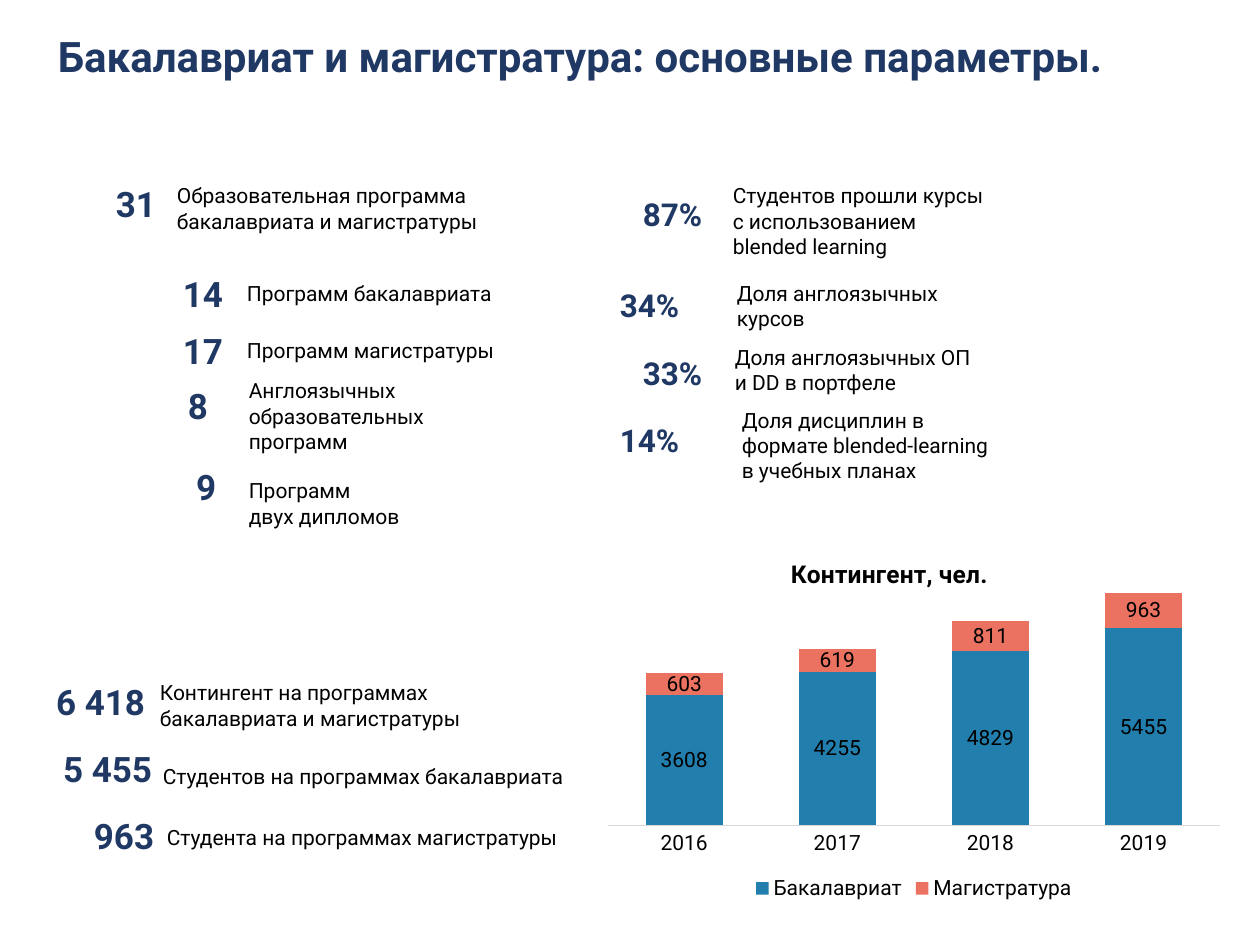
import pptx
import pptx.chart.data
import pptx.dml.color
import pptx.enum.chart
import pptx.enum.text
import pptx.oxml
import pptx.util

PX = 914400 // 126
FONT = "Roboto"
COLORS = {"navy": "203864", "black": "000000", "blue": "217EAD",
          "coral": "EB7260", "axis": "D9D9D9"}

# Content: text and box (left, top, width, height) in px
TITLE = ("Бакалавриат и магистратура: основные параметры.", (49, 25, 1100, 49))
COUNTS = [
    ("31", (74, 186, 91, 43)),
    ("14", (141, 276, 91, 43)),
    ("17", (141, 333, 91, 43)),
    ("9", (164, 469, 61, 43)),
    ("6 418", (-6, 684, 160, 43)),
    ("5 455", (-13, 751, 174, 43)),
    ("963", (33, 818, 130, 43)),
]
LEFT_COUNT = ("8", (179, 379, 43, 52))
RIGHT_SHARES = [("87%", (559, 190, 152, 48)), ("33%", (581, 349, 130, 48))]
LEFT_SHARES = [("34%", (611, 281, 149, 48)), ("14%", (611, 416, 141, 48))]
LABELS = [
    ("Образовательная программа бакалавриата и магистратуры", (168, 178, 325, 60)),
    ("Программ бакалавриата", (238, 275, 286, 35)),
    ("Программ магистратуры", (238, 332, 286, 35)),
    ("Англоязычных образовательных\nпрограмм", (240, 373, 237, 86)),
    ("Программ\nдвух дипломов", (240, 473, 286, 60)),
    ("Студентов прошли курсы\nс использованием blended learning", (724, 178, 271, 86)),
    ("Доля англоязычных курсов", (728, 275, 237, 60)),
    ("Доля англоязычных ОП\nи DD в портфеле", (726, 339, 271, 60)),
    ("Доля дисциплин в формате blended-learning в учебных планах",
     (733, 402, 271, 86)),
    ("Контингент на программах бакалавриата и магистратуры", (151, 675, 325, 60)),
    ("Студентов на программах бакалавриата", (154, 759, 427, 35)),
    ("Студента на программах магистратуры", (158, 820, 427, 35)),
]
CHART_TITLE = "Контингент, чел."
CHART_BOX = (595, 504, 638, 402)
YEARS = ["2016", "2017", "2018", "2019"]
SERIES = [("Бакалавриат", (3608, 4255, 4829, 5455), "blue"),
          ("Магистратура", (603, 619, 811, 963), "coral")]


def rgb(name):
    return pptx.dml.color.RGBColor.from_string(COLORS[name])


def emu(box):
    return [pptx.util.Emu(value * PX) for value in box]


def style(font, size, color="black", bold=False):
    font.name = FONT
    font.size = pptx.util.Pt(size)
    font.bold = bold
    font.color.rgb = rgb(color)


def add_text(page, text, box, size, color="navy", bold=True, right=False, spacing=None):
    frame = page.shapes.add_textbox(*emu(box)).text_frame
    frame.word_wrap = True
    frame.margin_left = frame.margin_right = pptx.util.Inches(0.07)
    frame.margin_top = frame.margin_bottom = pptx.util.Inches(0.04)
    frame.text = text
    for para in frame.paragraphs:
        if right:
            para.alignment = pptx.enum.text.PP_ALIGN.RIGHT
        if spacing:
            para.line_spacing = spacing
        for span in para.runs:
            style(span.font, size, color, bold)


def set_layout(element, inner=False, **fractions):
    """Place a chart part by fractions of the chart's size."""
    target = '<c:layoutTarget val="inner"/>' if inner else ""
    modes = '<c:xMode val="edge"/><c:yMode val="edge"/>'
    values = "".join(f'<c:{key} val="{value}"/>' for key, value in fractions.items())
    for old in element.findall(pptx.oxml.ns.qn("c:layout")):
        element.remove(old)
    layout = pptx.oxml.parse_xml(
        f'<c:layout {pptx.oxml.ns.nsdecls("c")}><c:manualLayout>'
        f"{target}{modes}{values}</c:manualLayout></c:layout>")
    text = element.find(pptx.oxml.ns.qn("c:tx"))
    element.insert(0 if text is None else 1, layout)


def add_chart(page):
    data = pptx.chart.data.CategoryChartData()
    data.categories = YEARS
    for name, values, _ in SERIES:
        data.add_series(name, values)
    kind = pptx.enum.chart.XL_CHART_TYPE.COLUMN_STACKED
    chart = page.shapes.add_chart(kind, *emu(CHART_BOX), data).chart
    style(chart.font, 12)

    # Title and legend
    chart.has_title = True
    chart.chart_title.text_frame.text = CHART_TITLE
    style(chart.chart_title.text_frame.paragraphs[0].runs[0].font, 14, bold=True)
    chart.chart_title.include_in_layout = False
    set_layout(chart.chart_title._element, x=0.3, y=0.12)
    chart.has_legend = True
    chart.legend.position = pptx.enum.chart.XL_LEGEND_POSITION.BOTTOM
    chart.legend.include_in_layout = False
    style(chart.legend.font, 12)

    # Axes
    chart.value_axis.visible = False
    chart.value_axis.has_major_gridlines = False
    chart.value_axis.minimum_scale = 0
    chart.value_axis.maximum_scale = 7000
    axis = chart.category_axis
    axis.major_tick_mark = pptx.enum.chart.XL_TICK_MARK.NONE
    axis.format.line.color.rgb = rgb("axis")
    axis.format.line.width = pptx.util.Pt(0.75)
    style(axis.tick_labels.font, 12)

    # Columns
    plot = chart.plots[0]
    plot.gap_width = 100
    plot.overlap = 100
    plot.vary_by_categories = False
    for series, (_, _, color) in zip(plot.series, SERIES):
        series.format.fill.solid()
        series.format.fill.fore_color.rgb = rgb(color)
        labels = series.data_labels
        labels.show_value = True
        labels.position = pptx.enum.chart.XL_LABEL_POSITION.CENTER
        style(labels.font, 12)
    plot_area = chart._chartSpace.chart.plotArea
    set_layout(plot_area, inner=True, x=0.02, y=0.17, w=0.96, h=0.63)


def main():
    deck = pptx.Presentation()
    deck.slide_width = pptx.util.Inches(10)
    deck.slide_height = pptx.util.Inches(7.5)
    page = deck.slides.add_slide(deck.slide_layouts[6])

    add_text(page, *TITLE, 24)
    for text, box in COUNTS:
        add_text(page, text, box, 20, right=True, spacing=0.8)
    add_text(page, *LEFT_COUNT, 20)
    for text, box in RIGHT_SHARES:
        add_text(page, text, box, 18, right=True)
    for text, box in LEFT_SHARES:
        add_text(page, text, box, 18)
    for text, box in LABELS:
        add_text(page, text, box, 12, "black", bold=False)
    add_chart(page)
    deck.save("out.pptx")


if __name__ == "__main__":
    main()
